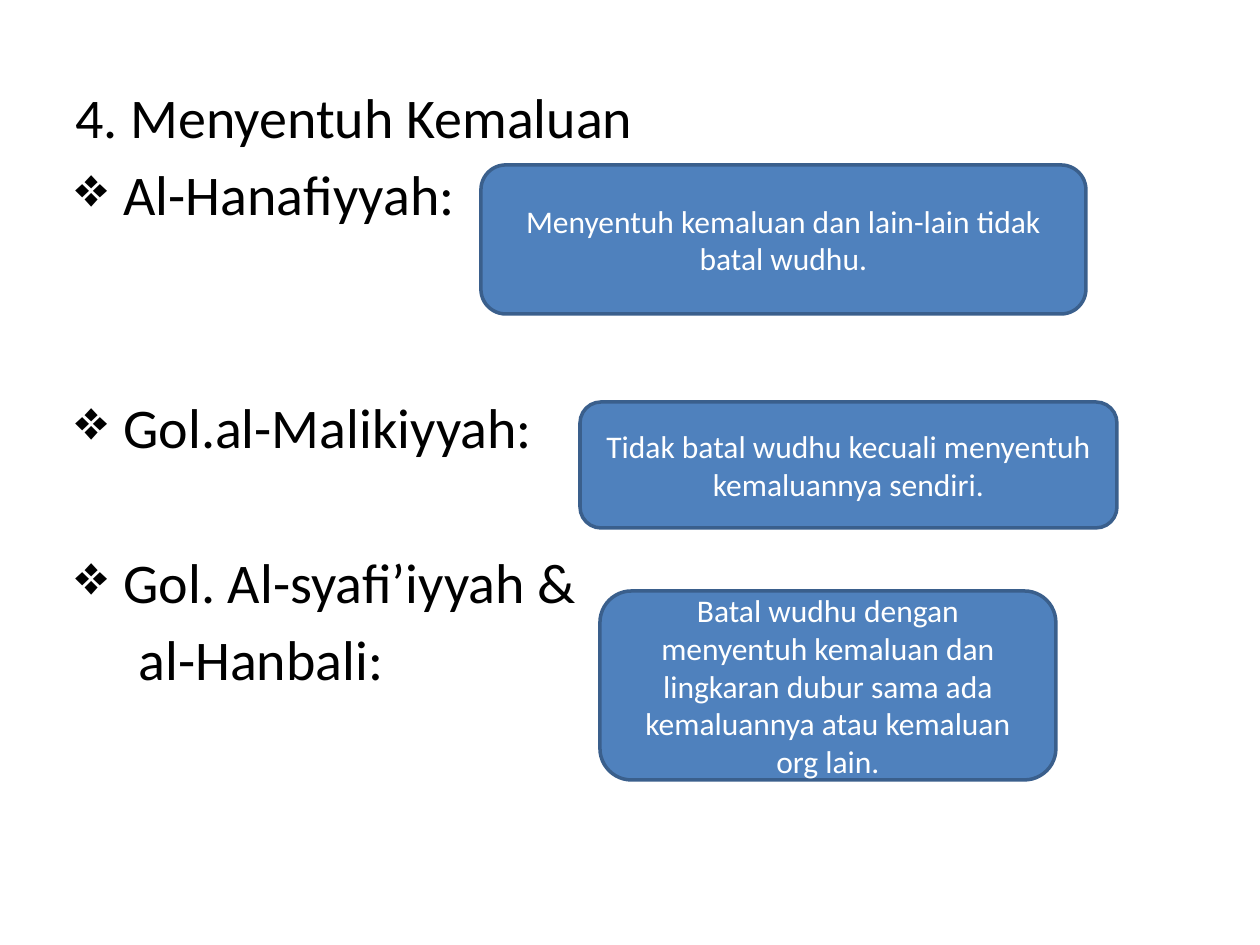
from dataclasses import dataclass

from lxml import etree
from pptx import Presentation
from pptx.dml.color import RGBColor
from pptx.enum.shapes import MSO_SHAPE
from pptx.enum.text import MSO_ANCHOR, PP_ALIGN
from pptx.oxml.ns import qn
from pptx.util import Emu, Pt

ROUND = MSO_SHAPE.ROUNDED_RECTANGLE
MIDDLE, TOP = MSO_ANCHOR.MIDDLE, MSO_ANCHOR.TOP
CENTER, LEFT = PP_ALIGN.CENTER, PP_ALIGN.LEFT
SCALE = 914400 / 126
PITCH, GAP = 78, 10  # line step and paragraph gap of the list


@dataclass(frozen=True)
class Theme:
    font: str = "Calibri"
    ink: str = "000000"
    paper: str = "FFFFFF"
    fill: str = "4F81BD"
    edge: str = "3A5F8C"
    body: int = 32
    note: int = 18
    line: int = 2


def px(n):
    return Emu(round(n * SCALE))


def color(code):
    return RGBColor.from_string(code)


def write(par, text, *, font, size, ink, align=LEFT, before=0,
          left=0, hang=0, mark=None):
    """Fill one paragraph; left and hang set its indent, mark its bullet."""
    props = par._p.get_or_add_pPr()
    props.set("marL", str(px(left)))
    props.set("indent", str(px(-hang)))
    if mark:
        etree.SubElement(props, qn("a:buChar")).set("char", mark)
    else:
        etree.SubElement(props, qn("a:buNone"))
    par.alignment = align
    par.space_before = px(before)
    run = par.add_run()
    run.text = text
    run.font.name, run.font.size = font, Pt(size)
    run.font.color.rgb = color(ink)


class Page:
    def __init__(self, slide, theme):
        self.slide, self.theme = slide, theme

    def list(self, box, rows):
        look = self.theme
        frame = self.slide.shapes.add_textbox(*map(px, box)).text_frame
        frame.word_wrap = True
        frame.vertical_anchor = TOP
        for i, (text, form) in enumerate(rows):
            par = frame.add_paragraph() if i else frame.paragraphs[0]
            write(par, text, font=look.font, size=look.body,
                  ink=look.ink, **form)

    def note(self, box, text):
        look = self.theme
        shape = self.slide.shapes.add_shape(ROUND, *map(px, box))
        shape.shadow.inherit = False
        shape.fill.solid()
        shape.fill.fore_color.rgb = color(look.fill)
        shape.line.color.rgb = color(look.edge)
        shape.line.width = Pt(look.line)
        frame = shape.text_frame
        frame.word_wrap = True
        frame.vertical_anchor = MIDDLE
        write(frame.paragraphs[0], text, font=look.font, size=look.note,
              ink=look.paper, align=CENTER)


def main():
    deck = Presentation()
    deck.slide_width, deck.slide_height = px(1260), px(945)
    page = Page(deck.slides.add_slide(deck.slide_layouts[6]), Theme())

    # Heading and schools, spaced by whole line steps
    item = dict(left=48, hang=48, mark="❖")
    page.list((63, 76, 1134, 769), [
        ("4. Menyentuh Kemaluan", {}),
        ("Al-Hanafiyyah:", dict(item, before=GAP)),
        ("Gol.al-Malikiyyah:", dict(item, before=GAP + 2 * PITCH)),
        ("Gol. Al-syafi’iyyah &", dict(item, before=GAP + PITCH)),
        ("al-Hanbali:", dict(left=63, before=GAP)),
    ])

    # Rulings beside each school
    page.note((481, 165, 605, 149),
              "Menyentuh kemaluan dan lain-lain tidak batal wudhu.")
    page.note((580, 402, 537, 126),
              "Tidak batal wudhu kecuali menyentuh kemaluannya sendiri.")
    page.note((600, 591, 456, 189),
              "Batal wudhu dengan menyentuh kemaluan dan lingkaran dubur "
              "sama ada kemaluannya atau kemaluan org lain.")

    deck.save("out.pptx")


if __name__ == "__main__":
    main()
